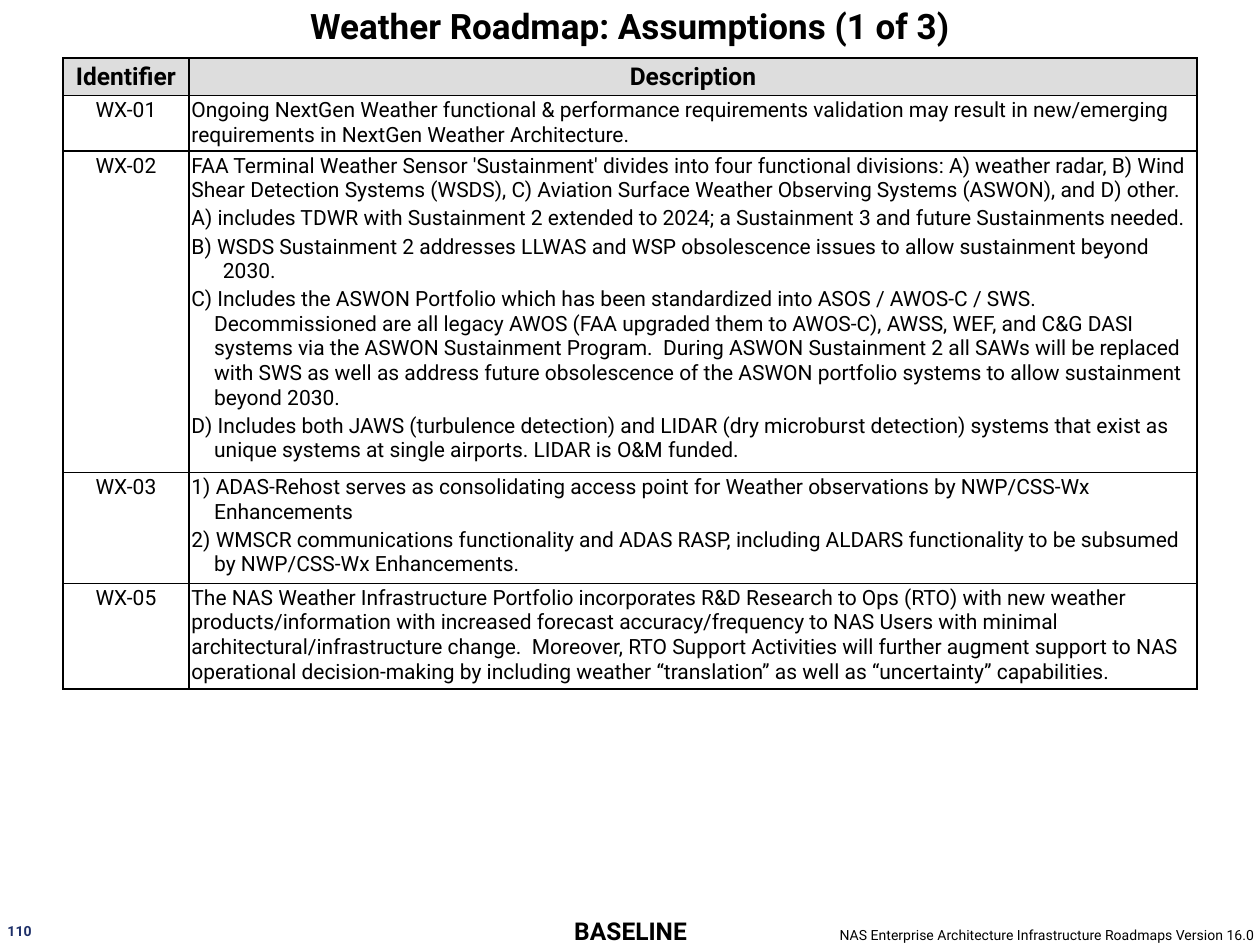
"""Build the weather roadmap assumptions slide."""
from dataclasses import dataclass

import pptx
import pptx.dml.color
import pptx.enum.text
import pptx.oxml.ns
import pptx.util
from lxml import etree
from pptx.util import Inches

COLORS = {"text": "000000", "header": "DDDDDD", "cell": "FFFFFF", "number": "1D2F68"}
FONT = "Roboto"
ALIGN = pptx.enum.text.PP_ALIGN
MIDDLE = pptx.enum.text.MSO_ANCHOR.MIDDLE
AUTO_SIZE = pptx.enum.text.MSO_AUTO_SIZE


@dataclass
class Item:
    text: str
    hanging: float = 0


@dataclass
class Assumption:
    identifier: str
    height: float
    items: list[Item]


@dataclass
class Label:
    text: str
    box: tuple[float, float, float, float]
    size: float
    alignment: ALIGN
    bold: bool = True
    color: str = "text"
    side_inset: float = 0
    anchor: pptx.enum.text.MSO_ANCHOR = pptx.enum.text.MSO_ANCHOR.TOP


ASSUMPTIONS = [
    Assumption("WX-01", 0.44, [
        Item("Ongoing NextGen Weather functional & performance requirements validation may result in "
             "new/emerging requirements in NextGen Weather Architecture."),
    ]),
    Assumption("WX-02", 2.55, [
        Item("FAA Terminal Weather Sensor 'Sustainment' divides into four functional divisions: "
             "A) weather radar, B) Wind Shear Detection Systems (WSDS), C) Aviation Surface Weather "
             "Observing Systems (ASWON), and D) other."),
        Item("A) includes TDWR with Sustainment 2 extended to 2024; a Sustainment 3 and future "
             "Sustainments needed.", 0.25),
        Item("B) WSDS Sustainment 2 addresses LLWAS and WSP obsolescence issues to allow sustainment "
             "beyond 2030.", 0.25),
        Item("C) Includes the ASWON Portfolio which has been standardized into ASOS / AWOS-C / SWS.  "
             "Decommissioned are all legacy AWOS (FAA upgraded them to AWOS-C), AWSS, WEF, and C&G DASI "
             "systems via the ASWON Sustainment Program.  During ASWON Sustainment 2 all SAWs will be "
             "replaced with SWS as well as address future obsolescence of the ASWON portfolio systems "
             "to allow sustainment beyond 2030.", 0.18),
        Item("D) Includes both JAWS (turbulence detection) and LIDAR (dry microburst detection) systems "
             "that exist as unique systems at single airports. LIDAR is O&M funded.", 0.18),
    ]),
    Assumption("WX-03", 0.88, [
        Item("1) ADAS-Rehost serves as consolidating access point for Weather observations by "
             "NWP/CSS-Wx Enhancements", 0.18),
        Item("2) WMSCR communications functionality and ADAS RASP, including ALDARS functionality to be "
             "subsumed by NWP/CSS-Wx Enhancements.", 0.18),
    ]),
    Assumption("WX-05", 0.84, [
        Item("The NAS Weather Infrastructure Portfolio incorporates R&D Research to Ops (RTO) with new "
             "weather products/information with increased forecast accuracy/frequency to NAS Users with "
             "minimal architectural/infrastructure change.  Moreover, RTO Support Activities will "
             "further augment support to NAS operational decision-making by including weather "
             "“translation” as well as “uncertainty” capabilities."),
    ]),
]

LABELS = [
    Label("NAS Enterprise Architecture Infrastructure Roadmaps Version 16.0",
          (6.3, 7.35, 3.68, 0.13), 8, ALIGN.RIGHT, bold=False, side_inset=0.02),
    Label("BASELINE", (4.23, 7.27, 1.55, 0.24), 14, ALIGN.CENTER, anchor=MIDDLE),
    Label("110", (0.06, 7.32, 0.3, 0.13), 8, ALIGN.LEFT, color="number"),
]


def style_paragraph(paragraph, size: float, bold: bool, alignment: ALIGN, color: str = "text") -> None:
    """Set the alignment and font of a paragraph."""
    paragraph.alignment = alignment
    font = paragraph.font
    font.name = FONT
    font.size = pptx.util.Pt(size)
    font.bold = bold
    font.color.rgb = pptx.dml.color.RGBColor.from_string(COLORS[color])


def add_borders(cell) -> None:
    """Give a cell a one-point line on every side."""
    properties = cell._tc.get_or_add_tcPr()
    for side in ("L", "R", "T", "B"):
        line = etree.SubElement(properties, pptx.oxml.ns.qn(f"a:ln{side}"), w=str(pptx.util.Pt(1)))
        fill = etree.SubElement(line, pptx.oxml.ns.qn("a:solidFill"))
        etree.SubElement(fill, pptx.oxml.ns.qn("a:srgbClr"), val=COLORS["text"])


def fill_cell(cell, items: list[Item], alignment: ALIGN, header: bool = False) -> None:
    """Write the items into a cell and format it."""
    cell.margin_left = cell.margin_right = cell.margin_top = cell.margin_bottom = Inches(0.02)
    if header:
        cell.vertical_anchor = MIDDLE
    add_borders(cell)
    cell.fill.solid()
    color = COLORS["header" if header else "cell"]
    cell.fill.fore_color.rgb = pptx.dml.color.RGBColor.from_string(color)
    cell.text_frame.text = "\n".join(item.text for item in items)
    for paragraph, item in zip(cell.text_frame.paragraphs, items):
        style_paragraph(paragraph, 14 if header else 12, header, alignment)
        paragraph.space_before = pptx.util.Pt(2)
        if item.hanging:
            properties = paragraph._p.get_or_add_pPr()
            properties.set("marL", str(Inches(item.hanging)))
            properties.set("indent", str(-Inches(item.hanging)))


def add_assumption_table(slide) -> None:
    """Add the table of identifiers and descriptions."""
    heights = [0.3] + [assumption.height for assumption in ASSUMPTIONS]
    table = slide.shapes.add_table(
        len(heights), 2, Inches(0.5), Inches(0.46), Inches(9), Inches(sum(heights))).table
    table.first_row = table.horz_banding = False
    for column, width in zip(table.columns, (1, 8)):
        column.width = Inches(width)
    for row, height in zip(table.rows, heights):
        row.height = Inches(height)
    for index, heading in enumerate(("Identifier", "Description")):
        fill_cell(table.cell(0, index), [Item(heading)], ALIGN.CENTER, header=True)
    for index, assumption in enumerate(ASSUMPTIONS, start=1):
        fill_cell(table.cell(index, 0), [Item(assumption.identifier)], ALIGN.CENTER)
        fill_cell(table.cell(index, 1), assumption.items, ALIGN.LEFT)


def add_label(slide, label: Label) -> None:
    """Add one line of text at the foot of the slide."""
    frame = slide.shapes.add_textbox(*map(Inches, label.box)).text_frame
    frame.margin_left = frame.margin_right = Inches(label.side_inset)
    frame.margin_top = frame.margin_bottom = 0
    frame.word_wrap = True
    frame.auto_size = AUTO_SIZE.SHAPE_TO_FIT_TEXT
    frame.vertical_anchor = label.anchor
    frame.text = label.text
    style_paragraph(frame.paragraphs[0], label.size, label.bold, label.alignment, label.color)


def set_title(slide, text: str) -> None:
    """Place and format the slide title."""
    title = slide.shapes.title
    title.left, title.top, title.width, title.height = map(Inches, (0, 0, 10, 0.4))
    frame = title.text_frame
    frame.text = text
    frame.auto_size = AUTO_SIZE.NONE
    frame.vertical_anchor = MIDDLE
    style_paragraph(frame.paragraphs[0], 20, True, ALIGN.CENTER)


def main() -> None:
    """Build and save the presentation."""
    presentation = pptx.Presentation()
    presentation.slide_width, presentation.slide_height = Inches(10), Inches(7.5)
    slide = presentation.slides.add_slide(presentation.slide_layouts.get_by_name("Title Only"))
    set_title(slide, "Weather Roadmap: Assumptions (1 of 3)")
    add_assumption_table(slide)
    for label in LABELS:
        add_label(slide, label)
    presentation.save("out.pptx")


if __name__ == "__main__":
    main()
